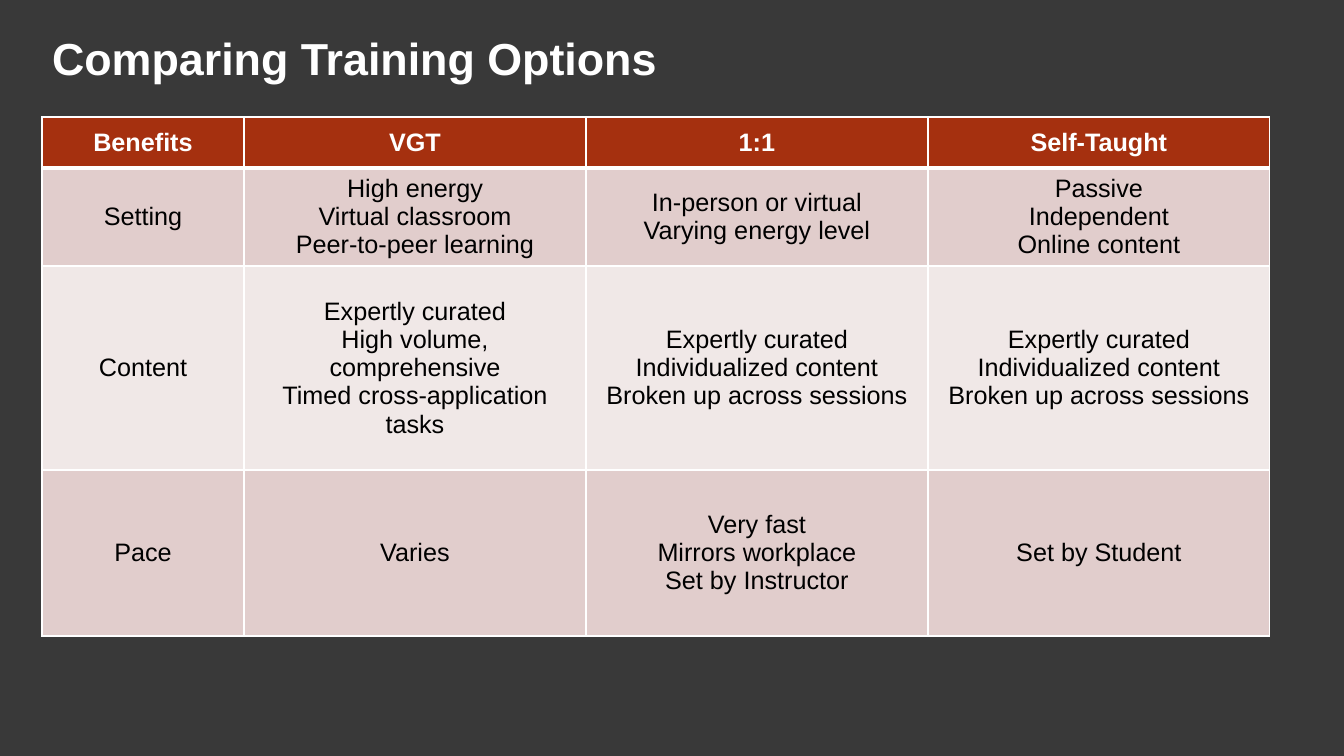
"""Build the slide that compares training options in a table."""
from dataclasses import dataclass

from lxml import etree
from pptx import Presentation
from pptx.dml.color import RGBColor
from pptx.enum.text import MSO_ANCHOR, MSO_AUTO_SIZE, PP_ALIGN
from pptx.oxml.ns import qn
from pptx.util import Pt

EMU_PER_PX = 914400 / 100.8
MIDDLE = MSO_ANCHOR.MIDDLE
NO_AUTOFIT = MSO_AUTO_SIZE.NONE
LEFT, CENTER = PP_ALIGN.LEFT, PP_ALIGN.CENTER
TITLE_ONLY_LAYOUT = 5


@dataclass(frozen=True)
class Theme:
    """Colours, font and point sizes of the slide."""
    background: str = "393939"
    light_text: str = "FFFFFF"
    dark_text: str = "000000"
    header_fill: str = "A5300F"
    band_fills: tuple = ("E1CDCC", "F0E8E7")
    border: str = "FFFFFF"
    font: str = "Arial"
    title_size: int = 32
    table_size: int = 18
    border_width: int = 1
    header_border_width: int = 3


THEME = Theme()
COLUMN_WIDTHS = (202, 342, 342, 342)
ROW_HEIGHTS = (51, 98, 204, 166)
TAILORED_CONTENT = "Expertly curated\nIndividualized content\nBroken up across sessions"
TRAINING_OPTIONS = (
    ("Benefits", "VGT", "1:1", "Self-Taught"),
    ("Setting",
     "High energy\nVirtual classroom\nPeer-to-peer learning",
     "In-person or virtual\nVarying energy level",
     "Passive\nIndependent\nOnline content"),
    ("Content",
     "Expertly curated\nHigh volume, comprehensive\nTimed cross-application tasks",
     TAILORED_CONTENT,
     TAILORED_CONTENT),
    ("Pace", "Varies", "Very fast\nMirrors workplace\nSet by Instructor", "Set by Student"),
)


def px(length):
    """Turn pixels into EMU."""
    return round(length * EMU_PER_PX)


def write_text(text_frame, text, *, size, color, bold=False, align=LEFT, line_spacing=None):
    """Write one formatted paragraph for each line of text."""
    text_frame.text = text
    for paragraph in text_frame.paragraphs:
        paragraph.alignment = align
        paragraph.line_spacing = line_spacing
        for run in paragraph.runs:
            run.font.name = THEME.font
            run.font.size = Pt(size)
            run.font.bold = bold
            run.font.color.rgb = RGBColor.from_string(color)


def add_title(slide, text, left, top, width, height):
    """Place and fill the title placeholder."""
    title = slide.shapes.title
    title.left, title.top, title.width, title.height = map(px, (left, top, width, height))
    frame = title.text_frame
    frame.auto_size = NO_AUTOFIT
    frame.vertical_anchor = MIDDLE
    write_text(frame, text, size=THEME.title_size, color=THEME.light_text,
               bold=True, line_spacing=0.9)


def add_borders(cell, widths):
    """Draw the left, right, top and bottom borders of a cell."""
    properties = cell._tc.get_or_add_tcPr()
    for side, width in zip("LRTB", widths):
        line = etree.SubElement(properties, qn(f"a:ln{side}"), w=str(Pt(width)))
        fill = etree.SubElement(line, qn("a:solidFill"))
        etree.SubElement(fill, qn("a:srgbClr"), val=THEME.border)


def format_cell(cell, text, row_index):
    """Fill one cell with the style of its row."""
    is_header = row_index == 0
    thin, thick = THEME.border_width, THEME.header_border_width
    add_borders(cell, (thin, thin, thick if row_index == 1 else thin,
                       thick if is_header else thin))
    fill = THEME.header_fill if is_header else THEME.band_fills[(row_index - 1) % 2]
    cell.fill.solid()
    cell.fill.fore_color.rgb = RGBColor.from_string(fill)
    cell.vertical_anchor = MIDDLE
    write_text(cell.text_frame, text, size=THEME.table_size, bold=is_header, align=CENTER,
               color=THEME.light_text if is_header else THEME.dark_text)


def add_comparison_table(slide, rows, left, top):
    """Add the table with its column widths and row heights."""
    frame = slide.shapes.add_table(len(rows), len(COLUMN_WIDTHS), px(left), px(top),
                                   px(sum(COLUMN_WIDTHS)), px(sum(ROW_HEIGHTS)))
    table = frame.table
    table.horz_banding = False
    for column, width in zip(table.columns, COLUMN_WIDTHS):
        column.width = px(width)
    for row_index, (row, height, texts) in enumerate(zip(table.rows, ROW_HEIGHTS, rows)):
        row.height = px(height)
        for cell, text in zip(row.cells, texts):
            format_cell(cell, text, row_index)


def main():
    """Build and save the presentation."""
    presentation = Presentation()
    presentation.slide_width, presentation.slide_height = px(1344), px(756)
    slide = presentation.slides.add_slide(presentation.slide_layouts[TITLE_ONLY_LAYOUT])
    slide.background.fill.solid()
    slide.background.fill.fore_color.rgb = RGBColor.from_string(THEME.background)
    add_title(slide, "Comparing Training Options", 42, 32, 1080, 58)
    add_comparison_table(slide, TRAINING_OPTIONS, 42, 117)
    presentation.save("out.pptx")


if __name__ == "__main__":
    main()
